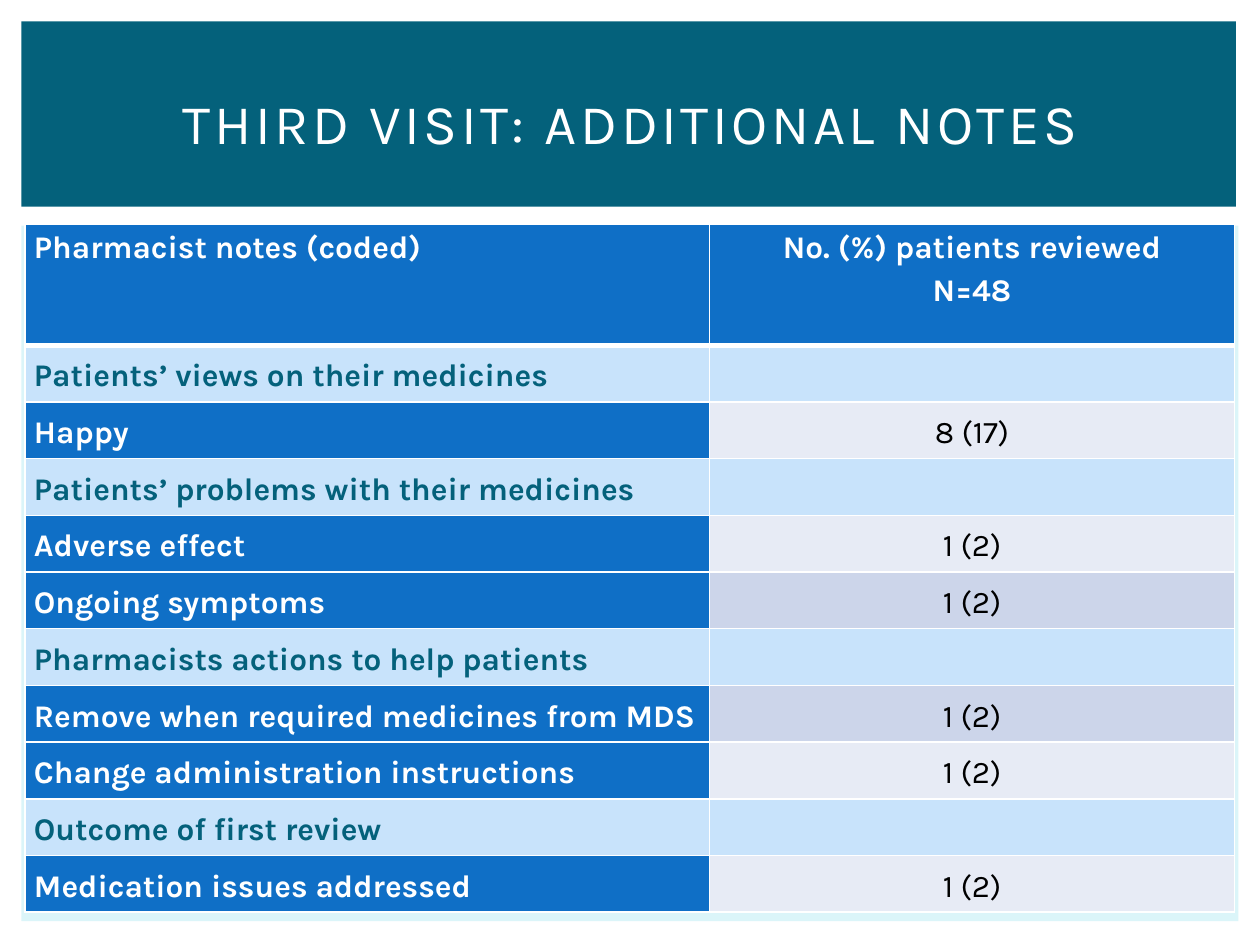
"""Build the slide tabulating the pharmacist notes from the third visit."""
from lxml import etree
from pptx import Presentation
from pptx.dml.color import RGBColor
from pptx.enum import shapes, text
from pptx.oxml import ns
from pptx.util import Inches, Pt

TITLE = "THIRD VISIT: ADDITIONAL NOTES"
HEADER = ("Pharmacist notes (coded)", "No. (%) patients reviewed\nN=48")
SECTIONS = {
    "Patients’ views on their medicines": [("Happy", "8 (17)")],
    "Patients’ problems with their medicines": [
        ("Adverse effect", "1 (2)"),
        ("Ongoing symptoms", "1 (2)"),
    ],
    "Pharmacists actions to help patients": [
        ("Remove when required medicines from MDS", "1 (2)"),
        ("Change administration instructions", "1 (2)"),
    ],
    "Outcome of first review": [("Medication issues addressed", "1 (2)")],
}
THEME = {
    "font": "Karla", "title_size": 32, "table_size": 18,
    "white": "FFFFFF", "black": "000000", "teal": "04617B", "backdrop": "DBF5F9",
    "blue": "0F6FC6", "section": "C8E3FB", "bands": ("E7EBF5", "CCD5EA"),
}
PANELS = [
    ((0.17, 1.79, 9.66, 5.52), "backdrop"),
    ((0.17, 0.17, 9.64, 1.47), "teal"),
]
TITLE_BOX = (0.42, 0.39, 9.17, 1.15)
TABLE_AT = (0.2, 1.78)
COLUMNS = (5.43, 4.17)
HEADER_HEIGHT, ROW_HEIGHT = 0.96, 0.45
THIN, THICK = 1, 3


def set_values(target, values):
    for name, value in values.items():
        setattr(target, name, value)


def style_font(font, size, color, bold=False):
    set_values(font, {"name": THEME["font"], "size": Pt(size), "bold": bold})
    font.color.rgb = RGBColor.from_string(color)


def add_panel(page, box, color):
    panel = page.shapes.add_shape(shapes.MSO_SHAPE.RECTANGLE, *map(Inches, box))
    panel.shadow.inherit = False
    panel.fill.solid()
    panel.fill.fore_color.rgb = RGBColor.from_string(THEME[color])
    panel.line.fill.background()


def fill_title(page):
    title = page.shapes.title
    set_values(title, dict(zip(("left", "top", "width", "height"), map(Inches, TITLE_BOX))))
    frame = title.text_frame
    frame.text = TITLE
    set_values(frame, {"vertical_anchor": text.MSO_ANCHOR.MIDDLE, "word_wrap": True})
    para = frame.paragraphs[0]
    para.alignment = text.PP_ALIGN.CENTER
    span = para.runs[0]
    style_font(span.font, THEME["title_size"], THEME["white"])
    span.font._element.set("spc", "200")
    page.shapes._spTree.append(title._element)


def draw_borders(cell, top, bottom):
    properties = cell._tc.get_or_add_tcPr()
    widths = {"lnL": THIN, "lnR": THIN, "lnT": top, "lnB": bottom}
    for position, (side, width) in enumerate(widths.items()):
        line = etree.Element(ns.qn(f"a:{side}"), w=str(Pt(width)))
        paint = etree.SubElement(line, ns.qn("a:solidFill"))
        etree.SubElement(paint, ns.qn("a:srgbClr"), val=THEME["white"])
        properties.insert(position, line)


def fill_cell(cell, wording, fill, color, bold, centred, anchor):
    cell.text = wording
    set_values(cell, {
        "margin_left": Inches(0.07), "margin_right": Inches(0.07),
        "margin_top": 0, "margin_bottom": 0, "vertical_anchor": anchor,
    })
    cell.fill.solid()
    cell.fill.fore_color.rgb = RGBColor.from_string(fill)
    for para in cell.text_frame.paragraphs:
        para.line_spacing = 1.15
        para.alignment = text.PP_ALIGN.CENTER if centred else text.PP_ALIGN.LEFT
        style_font(para.font, THEME["table_size"], color, bold)
        for span in para.runs:
            style_font(span.font, THEME["table_size"], color, bold)


def table_rows():
    yield "header", HEADER
    for section, notes in SECTIONS.items():
        yield "section", (section, "")
        for note in notes:
            yield "note", note


def add_notes_table(page):
    rows = list(table_rows())
    heights = [HEADER_HEIGHT] + [ROW_HEIGHT] * (len(rows) - 1)
    size = (sum(COLUMNS), sum(heights))
    table = page.shapes.add_table(
        len(rows), len(COLUMNS), *map(Inches, TABLE_AT + size)).table
    for column, width in zip(table.columns, COLUMNS):
        column.width = Inches(width)
    for index, (kind, wording) in enumerate(rows):
        table.rows[index].height = Inches(heights[index])
        header = kind == "header"
        label = (THEME["blue"], THEME["white"], True)
        looks = {
            "header": (label, label),
            "section": ((THEME["section"], THEME["teal"], True),) * 2,
            "note": (label, (THEME["bands"][index % 2], THEME["black"], False)),
        }[kind]
        anchor = text.MSO_ANCHOR.TOP if header else text.MSO_ANCHOR.MIDDLE
        for column, (words, look) in enumerate(zip(wording, looks)):
            cell = table.cell(index, column)
            fill_cell(cell, words, *look, column == 1, anchor)
            draw_borders(cell, THICK if index == 1 else THIN, THICK if header else THIN)


def main():
    deck = Presentation()
    set_values(deck, {"slide_width": Inches(10), "slide_height": Inches(7.5)})
    page = deck.slides.add_slide(deck.slide_layouts.get_by_name("Title Only"))
    for box, color in PANELS:
        add_panel(page, box, color)
    fill_title(page)
    add_notes_table(page)
    deck.save("out.pptx")


if __name__ == "__main__":
    main()
